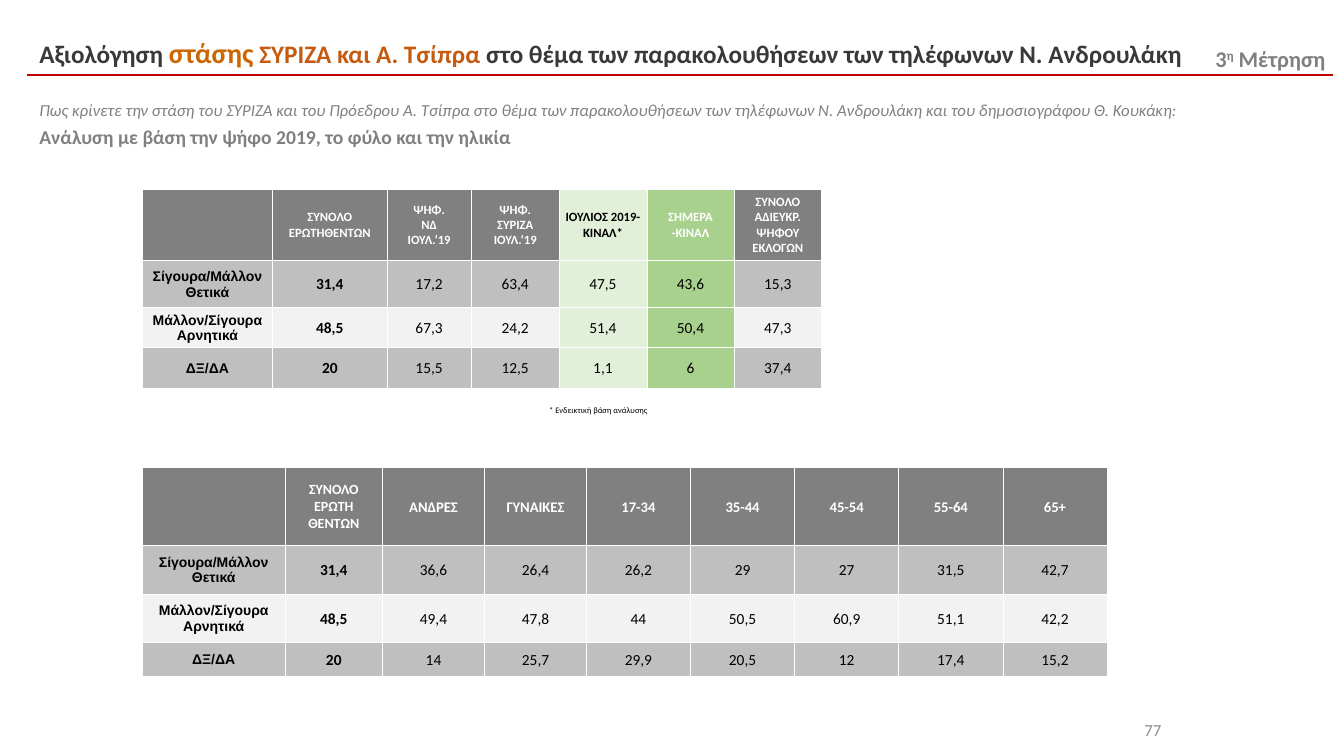
from dataclasses import dataclass
from typing import Optional

from lxml import etree
from pptx import Presentation
from pptx import util as u
from pptx.dml import color
from pptx.enum import shapes, text
from pptx.oxml import ns

# The slide is a grid of 160 columns by 90 rows of square cells
COLUMNS, ROWS = 160, 90
CELL = u.Inches(1) / 12

COLORS = {
    "white": "FFFFFF", "black": "000000", "rule": "C00000", "title": "3B3838",
    "stance": "CC6600", "party": "C55A11", "gray": "808080", "page": "8C8C8C",
    "band": "BFBFBF", "pale": "F2F2F2", "mint": "E2F0D9", "green": "A9D18E",
}
ROW_LABELS = ["Σίγουρα/Μάλλον Θετικά", "Μάλλον/Σίγουρα Αρνητικά", "ΔΞ/ΔΑ"]
ROW_FILLS = ["band", "pale", "band"]


@dataclass
class Run:
    words: str
    size: float
    ink: str
    bold: bool = False
    italic: bool = False
    face: str = "Calibri"
    raised: bool = False


@dataclass
class Line:
    runs: list[Run]
    align: text.PP_ALIGN = text.PP_ALIGN.LEFT
    spacing: float = 1.0
    before: float = 0


@dataclass
class Column:
    width: float
    heading: str
    values: list[str]
    size: float
    fill: Optional[str] = None
    ink: str = "white"


@dataclass
class ResultTable:
    top: float
    heights: list[float]
    label_width: float
    columns: list[Column]


def grid(count: float) -> u.Emu:
    return u.Emu(round(count * CELL))


def rgb(name: str) -> color.RGBColor:
    return color.RGBColor.from_string(COLORS[name])


def write(frame, lines: list[Line]) -> None:
    for index, line in enumerate(lines):
        paragraph = frame.paragraphs[0] if index == 0 else frame.add_paragraph()
        values = {"alignment": line.align, "line_spacing": line.spacing}
        if line.before:
            values["space_before"] = u.Pt(line.before)
        for name, value in values.items():
            setattr(paragraph, name, value)
        for item in line.runs:
            run = paragraph.add_run()
            run.text = item.words
            formats = {"name": item.face, "size": u.Pt(item.size),
                       "bold": item.bold, "italic": item.italic}
            for name, value in formats.items():
                setattr(run.font, name, value)
            run.font.color.rgb = rgb(item.ink)
            if item.raised:
                run.font._element.set("baseline", "30000")


def add_text(slide, left: float, top: float, width: float, height: float,
             lines: list[Line], wrap: bool = True) -> None:
    box = slide.shapes.add_textbox(*map(grid, (left, top, width, height)))
    box.text_frame.word_wrap = wrap
    write(box.text_frame, lines)


def fill_cell(cell, fill: str, lines: list[Line]) -> None:
    formats = {"vertical_anchor": text.MSO_ANCHOR.MIDDLE, "margin_left": u.Inches(0.01),
               "margin_right": u.Inches(0.01), "margin_top": u.Inches(0.01), "margin_bottom": 0}
    for name, value in formats.items():
        setattr(cell, name, value)
    properties = cell._tc.get_or_add_tcPr()
    for side in ("lnL", "lnR", "lnT", "lnB"):
        border = etree.SubElement(properties, ns.qn(f"a:{side}"), w=str(u.Pt(0.5)))
        solid = etree.SubElement(border, ns.qn("a:solidFill"))
        etree.SubElement(solid, ns.qn("a:srgbClr"), val=COLORS["white"])
    cell.fill.solid()
    cell.fill.fore_color.rgb = rgb(fill)
    write(cell.text_frame, lines)


def centered(run: Run) -> Line:
    return Line([run], text.PP_ALIGN.CENTER)


def add_results(slide, results: ResultTable) -> None:
    widths = [results.label_width] + [column.width for column in results.columns]
    frame = slide.shapes.add_table(
        len(results.heights), len(widths), grid(16.92), grid(results.top),
        grid(sum(widths)), grid(sum(results.heights)))
    table = frame.table
    table.first_row = table.horz_banding = False
    for column, width in zip(table.columns, widths):
        column.width = grid(width)
    for row, height in zip(table.rows, results.heights):
        row.height = grid(height)

    # Row labels
    fill_cell(table.cell(0, 0), "gray", [])
    for row, (label, fill) in enumerate(zip(ROW_LABELS, ROW_FILLS), 1):
        fill_cell(table.cell(row, 0), fill, [centered(Run(label, 10, "black", True, face="Arial"))])

    # Headings and values; the first column holds the bold totals
    for place, column in enumerate(results.columns, 1):
        heading = [centered(Run(part, column.size, column.ink, True))
                   for part in column.heading.split("\n")]
        fill_cell(table.cell(0, place), column.fill or "gray", heading)
        for row, (value, fill) in enumerate(zip(column.values, ROW_FILLS), 1):
            fill_cell(table.cell(row, place), column.fill or fill,
                      [centered(Run(value, 11, "black", place == 1))])


TOTALS = ["31,4", "48,5", "20"]
VOTE_RESULTS = ResultTable(22.5, [8.5, 5.6, 4.8, 4.8], 15.55, [
    Column(13.6, "ΣΥΝΟΛΟ\nΕΡΩΤΗΘΕΝΤΩΝ", TOTALS, 9),
    Column(10.05, "ΨΗΦ.\nΝΔ\nΙΟΥΛ.‘19", ["17,2", "67,3", "15,5"], 9),
    Column(10.45, "ΨΗΦ.\nΣΥΡΙΖΑ\nΙΟΥΛ.‘19", ["63,4", "24,2", "12,5"], 9),
    Column(10.45, "ΙΟΥΛΙΟΣ 2019-\nΚΙΝΑΛ*", ["47,5", "51,4", "1,1"], 9, "mint", "black"),
    Column(10.4, "ΣΗΜΕΡΑ\n-ΚΙΝΑΛ", ["43,6", "50,4", "6"], 9, "green"),
    Column(10.4, "ΣΥΝΟΛΟ\nΑΔΙΕΥΚΡ.\nΨΗΦΟΥ\nΕΚΛΟΓΩΝ", ["15,3", "47,3", "37,4"], 9),
])
AGE_VALUES = {
    "17-34": ["26,2", "44", "29,9"],
    "35-44": ["29", "50,5", "20,5"],
    "45-54": ["27", "60,9", "12"],
    "55-64": ["31,5", "51,1", "17,4"],
    "65+": ["42,7", "42,2", "15,2"],
}
PEOPLE_RESULTS = ResultTable(55.68, [9.25, 5.8, 5.8, 3.95], 17.05, [
    Column(11.55, "ΣΥΝΟΛΟ\nΕΡΩΤΗ\nΘΕΝΤΩΝ", TOTALS, 10),
    Column(12.2, "ΑΝΔΡΕΣ", ["36,6", "49,4", "14"], 10.5),
    Column(12.1, "ΓΥΝΑΙΚΕΣ", ["26,4", "47,8", "25,7"], 10.5),
    *(Column(12.4, age, values, 10.5) for age, values in AGE_VALUES.items()),
])
TITLE_LINES = [
    Line([Run("Αξιολόγηση ", 18, "title", True),
          Run("στάσης", 20, "stance", True),
          Run(" ", 18, "title", True),
          Run("ΣΥΡΙΖΑ και Α. Τσίπρα ", 18, "party", True),
          Run("στο θέμα των παρακολουθήσεων των τηλέφωνων Ν. Ανδρουλάκη", 18, "title", True)],
         spacing=1.1),
    Line([Run("Πως κρίνετε την στάση του ΣΥΡΙΖΑ και του Πρόεδρου Α. Τσίπρα στο θέμα των "
              "παρακολουθήσεων των τηλέφωνων Ν. Ανδρουλάκη και του δημοσιογράφου Θ. Κουκάκη:",
              12, "gray", italic=True)], spacing=1.1, before=20.5),
    Line([Run("Ανάλυση με βάση την ψήφο 2019, το φύλο και την ηλικία", 14, "gray", True)],
         spacing=1.2),
]


def main() -> None:
    presentation = Presentation()
    presentation.slide_width, presentation.slide_height = grid(COLUMNS), grid(ROWS)
    slide = presentation.slides.add_slide(presentation.slide_layouts[6])

    # Title with its rule and the wave badge
    rule = slide.shapes.add_connector(
        shapes.MSO_CONNECTOR.STRAIGHT, *map(grid, (3.2, 8.9, 158.65, 8.9)))
    rule.line.color.rgb = rgb("rule")
    rule.line.width = u.Pt(1.5)
    etree.SubElement(rule._element.spPr, ns.qn("a:effectLst"))
    add_text(slide, 143.5, 4.8, 16.5, 4.4, [Line([
        Run("3", 16, "gray", True), Run("η", 16, "gray", True, raised=True),
        Run(" Μέτρηση", 16, "gray", True)])], wrap=False)
    add_text(slide, 3.5, 3.25, 150, 15.4, TITLE_LINES)

    # Page number
    page = slide.shapes.add_shape(
        shapes.MSO_SHAPE.RECTANGLE, *map(grid, (131.75, 84.5, 7.7, 4.8)))
    page.shadow.inherit = False
    page.fill.solid()
    page.fill.fore_color.rgb = rgb("white")
    page.line.fill.background()
    page.text_frame.vertical_anchor = text.MSO_ANCHOR.MIDDLE
    write(page.text_frame, [Line([Run("77", 12, "page")], text.PP_ALIGN.RIGHT)])

    # Result tables and the footnote
    add_results(slide, VOTE_RESULTS)
    add_results(slide, PEOPLE_RESULTS)
    add_text(slide, 64.2, 47.6, 14.3, 2.4,
             [Line([Run("* Ενδεικτική βάση ανάλυσης", 6, "black")])], wrap=False)
    presentation.save("out.pptx")


if __name__ == "__main__":
    main()
